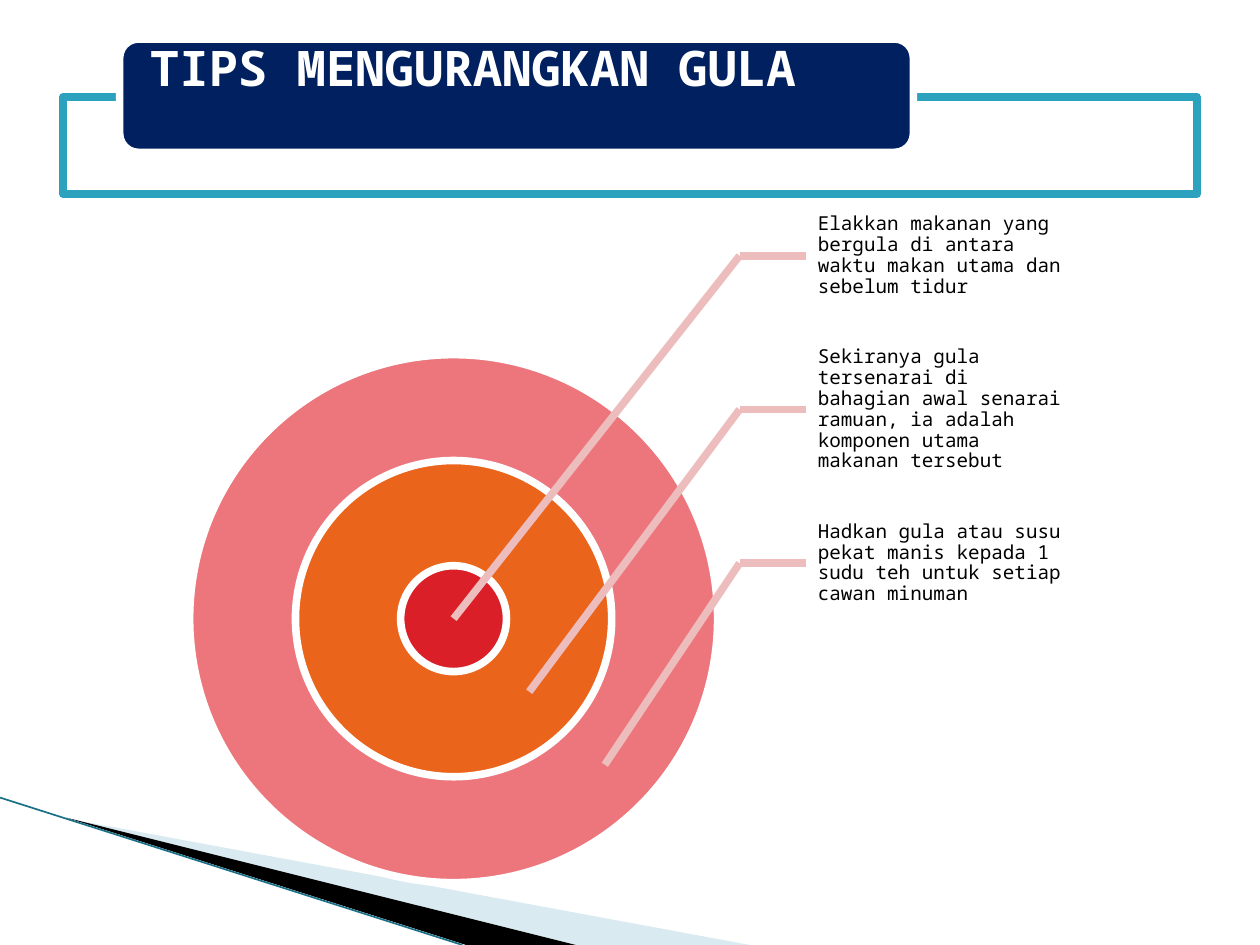
"""Build the slide of sugar-cutting tips around a three-ring target."""
from typing import NamedTuple, Optional

from lxml import etree
from pptx import Presentation
from pptx.dml.color import RGBColor
from pptx.enum.shapes import MSO_CONNECTOR, MSO_SHAPE
from pptx.enum.text import MSO_ANCHOR, MSO_AUTO_SIZE, PP_ALIGN
from pptx.oxml.ns import qn
from pptx.util import Inches, Pt

OVAL, RECT, ROUND = MSO_SHAPE.OVAL, MSO_SHAPE.RECTANGLE, MSO_SHAPE.ROUNDED_RECTANGLE
STRAIGHT = MSO_CONNECTOR.STRAIGHT
TOP, MIDDLE = MSO_ANCHOR.TOP, MSO_ANCHOR.MIDDLE
NO_FIT, LEFT = MSO_AUTO_SIZE.NONE, PP_ALIGN.LEFT

WHITE = RGBColor(0xFF, 0xFF, 0xFF)
BLACK = RGBColor(0x00, 0x00, 0x00)
PINK = RGBColor(0xEC, 0x76, 0x7C)
ORANGE = RGBColor(0xEB, 0x64, 0x1B)
RED = RGBColor(0xDA, 0x1F, 0x28)
BLUSH = RGBColor(0xED, 0xBD, 0xBE)
TEAL = RGBColor(0x2D, 0xA2, 0xBF)
DEEP = RGBColor(0x1A, 0x70, 0x86)
PALE = RGBColor(0xA0, 0xCB, 0xDC)
NAVY = RGBColor(0x00, 0x20, 0x60)

FONT = "Noto Sans Mono"
THICK = 4.33
HUB_X, HUB_Y = 3.6, 4.91
BEND_X, TEXT_X = 5.87, 6.4
TEXT_Y, TEXT_W, STEP = 1.42, 2.09, 1.22
BAR = (0.95, 0.31, 6.3, 0.9)


class Wedge(NamedTuple):
    points: list[tuple[float, float]]
    fill: RGBColor
    alpha: int


class Ring(NamedTuple):
    size: float
    fill: RGBColor


class Tip(NamedTuple):
    text: str
    end: tuple[float, float]


WEDGES = [
    Wedge([(0.55, 6.5), (5.95, 7.5), (4.56, 7.5)], PALE, 40),
    Wedge([(0.53, 6.49), (4.57, 7.5), (3.7, 7.5)], BLACK, 100),
]
RINGS = [Ring(4.19, PINK), Ring(2.51, ORANGE), Ring(0.84, RED)]
TIPS = [
    Tip("Elakkan makanan yang bergula di antara waktu makan utama dan "
        "sebelum tidur", (HUB_X, HUB_Y)),
    Tip("Sekiranya gula tersenarai di bahagian awal senarai ramuan, ia adalah "
        "komponen utama makanan tersebut", (4.2, 5.49)),
    Tip("Hadkan gula atau susu pekat manis kepada 1 sudu teh untuk setiap "
        "cawan minuman", (4.8, 6.07)),
]


def paint(shape, fill: RGBColor, line: Optional[RGBColor] = None, alpha: int = 100) -> None:
    """Set the fill, outline and opacity of a shape."""
    shape.shadow.inherit = False
    shape.fill.solid()
    shape.fill.fore_color.rgb = fill
    if alpha < 100:
        tint = shape.element.spPr.find(qn("a:solidFill"))[0]
        etree.SubElement(tint, qn("a:alpha"), val=str(alpha * 1000))
    if line is None:
        shape.line.fill.background()
    else:
        shape.line.color.rgb = line
        shape.line.width = Pt(THICK)


def add_wedge(slide, wedge: Wedge) -> None:
    """Draw one filled corner wedge."""
    points = [(Inches(x), Inches(y)) for x, y in wedge.points]
    pen = slide.shapes.build_freeform(*points[0])
    pen.add_line_segments(points[1:])
    paint(pen.convert_to_shape(), wedge.fill, alpha=wedge.alpha)


def add_box(slide, kind, box: tuple, fill: RGBColor, line: RGBColor, alpha: int = 100) -> None:
    """Draw one outlined preset shape."""
    shape = slide.shapes.add_shape(kind, *map(Inches, box))
    paint(shape, fill, line, alpha)


def add_line(slide, start: tuple, end: tuple, color: RGBColor, width: float) -> None:
    """Draw one straight line without a shadow."""
    line = slide.shapes.add_connector(STRAIGHT, *map(Inches, start + end))
    line.line.color.rgb = color
    line.line.width = Pt(width)
    etree.SubElement(line.element.spPr, qn("a:effectLst"))


def put_text(shape, text: str, insets: tuple, anchor, size: float,
             color: RGBColor, bold: bool = False) -> None:
    """Write one formatted paragraph into a shape."""
    frame = shape.text_frame
    frame.text = text
    part = frame.paragraphs[0]
    sides = ("margin_left", "margin_top", "margin_right", "margin_bottom")
    styles = [
        (frame, {"word_wrap": True, "auto_size": NO_FIT, "vertical_anchor": anchor,
                 **dict(zip(sides, map(Inches, insets)))}),
        (part, {"alignment": LEFT, "line_spacing": 0.9}),
        (part.runs[0].font, {"name": FONT, "size": Pt(size), "bold": bold}),
    ]
    for item, values in styles:
        for name, value in values.items():
            setattr(item, name, value)
    part.runs[0].font.color.rgb = color


def add_tip(slide, tip: Tip, top: float) -> None:
    """Draw one tip with its bent leader."""
    box = slide.shapes.add_textbox(*map(Inches, (TEXT_X, top, TEXT_W, STEP)))
    put_text(box, tip.text, (0.09, 0.02, 0.02, 0.02), MIDDLE, 11, BLACK)
    bend = (BEND_X, top + STEP / 2)
    for end in ((TEXT_X, bend[1]), tip.end):
        add_line(slide, bend, end, BLUSH, THICK)


def add_title(slide) -> None:
    """Draw the title bar and lay the title over it."""
    add_box(slide, RECT, (0.5, 0.77, 9, 0.77), WHITE, TEAL, 90)
    add_box(slide, ROUND, BAR, NAVY, WHITE)
    title = slide.shapes.title
    for name, value in zip(("left", "top", "width", "height"), BAR):
        setattr(title, name, Inches(value))
    put_text(title, "TIPS MENGURANGKAN GULA", (0.24, 0.04, 0.24, 0), TOP, 28, WHITE, True)
    title.element.getparent().append(title.element)


def main() -> None:
    """Build and save the deck."""
    deck = Presentation()
    deck.slide_width, deck.slide_height = Inches(10), Inches(7.5)
    slide = deck.slides.add_slide(deck.slide_layouts[5])
    for wedge in WEDGES:
        add_wedge(slide, wedge)
    add_line(slide, (0, 6.33), (3.67, 7.5), DEEP, 0.95)
    for size, fill in RINGS:
        box = (HUB_X - size / 2, HUB_Y - size / 2, size, size)
        add_box(slide, OVAL, box, fill, WHITE)
    for row, tip in enumerate(TIPS):
        add_tip(slide, tip, TEXT_Y + row * STEP)
    add_title(slide)
    deck.save("out.pptx")


if __name__ == "__main__":
    main()
